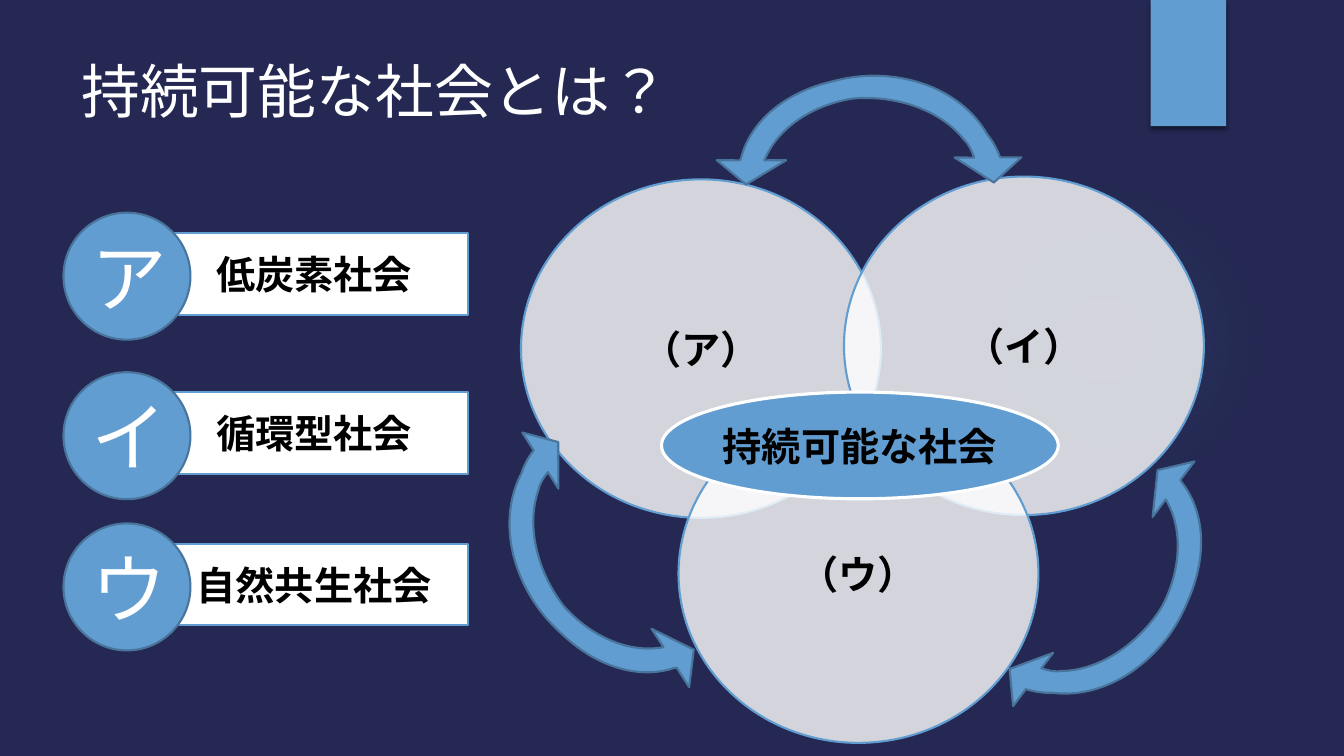
from lxml import etree
from pptx import Presentation
from pptx.dml.color import RGBColor
from pptx.enum import lang, shapes, text
from pptx.oxml import parse_xml
from pptx.oxml.ns import nsdecls, qn
from pptx.util import Cm, Pt

NAVY = RGBColor(0x24, 0x28, 0x52)
BLUE = RGBColor(0x62, 0x9D, 0xD1)
STEEL = RGBColor(0x49, 0x74, 0x9B)
WHITE = RGBColor(0xFF, 0xFF, 0xFF)
BLACK = RGBColor(0, 0, 0)

OVAL = shapes.MSO_SHAPE.OVAL
RECTANGLE = shapes.MSO_SHAPE.RECTANGLE

SOCIETIES = [("ア", "低炭素社会", 5.36), ("イ", "循環型社会", 9.38),
             ("ウ", "自然共生社会", 13.19)]
CIRCLES = [("（ア）", 13.13, 4.52), ("（イ）", 21.27, 4.45),
           ("（ウ）", 17.1, 10.19)]
# Centre and turn in degrees of each double arrow
ARROWS = [(21.84, 3.42, 353.4), (14.82, 14.47, 230.7), (28.32, 15, 120.5)]

# Double arrow around its centre in cm: one point is a line, three are a curve
ARROW_START = (0.36, -1.48)
ARROW_OUTLINE = [
    [(1.62, -1.33), (2.62, -0.63), (3.02, 0.31)],
    [(3.15, 0.51), (3.23, 0.72), (3.28, 0.93)],
    [(3.81, 0.99)], [(3.05, 1.54)], [(2.14, 0.8)], [(2.63, 0.86)],
    [(2.59, 0.69), (2.54, 0.51), (2.42, 0.37)],
    [(1.99, -0.32), (1.13, -0.81), (0.15, -0.94)],
    [(0, -0.96), (-0.13, -0.97), (-0.26, -0.97)],
    [(-1.28, -0.92), (-2.21, -0.45), (-2.63, 0.32)],
    [(-2.08, 0.38)], [(-3.16, 0.87)], [(-3.82, 0.18)], [(-3.24, 0.25)],
    [(-3.2, 0.18)],
    [(-2.87, -0.67), (-1.97, -1.28), (-0.84, -1.44)],
    [(-0.45, -1.5), (-0.06, -1.53), (0.36, -1.48)],
]


def paint(shape, fill, line=None, width=1.5):
    shape.shadow.inherit = False
    shape.fill.solid()
    shape.fill.fore_color.rgb = fill
    if line is None:
        shape.line.fill.background()
    else:
        shape.line.color.rgb = line
        shape.line.width = Pt(width)


def add_figure(page, kind, place, fill, line=None, width=1.5):
    shape = page.shapes.add_shape(kind, *(Cm(length) for length in place))
    paint(shape, fill, line, width)
    return shape


def write(shape, words, size, color, font="Arial", bold=False,
          align=text.PP_ALIGN.CENTER, anchor=text.MSO_ANCHOR.MIDDLE):
    frame = shape.text_frame
    frame.word_wrap = True
    frame.vertical_anchor = anchor
    frame.text = words
    para = frame.paragraphs[0]
    para.alignment = align
    span = para.runs[0]
    span.font.size = Pt(size)
    span.font.bold = bold
    span.font.color.rgb = color
    span.font.name = font
    span.font.language_id = lang.MSO_LANGUAGE_ID.JAPANESE
    latin = span.font._element.find(qn("a:latin"))
    latin.addnext(etree.Element(qn("a:ea"), typeface=font))


def set_opacity(shape, percent):
    color = shape._element.spPr.find(qn("a:solidFill"))[0]
    etree.SubElement(color, qn("a:alpha"), val=str(percent * 1000))


def add_glow(page):
    glow = add_figure(page, OVAL, (23.9, 4.65, 7.82, 7.82), WHITE)
    stops = "".join(
        f'<a:gs pos="{place * 1000}"><a:srgbClr val="5AA2AE">'
        f'<a:alpha val="{alpha * 1000}"/></a:srgbClr></a:gs>'
        for place, alpha in [(0, 7), (36, 6), (69, 0)])
    gradient = parse_xml(
        f'<a:gradFill {nsdecls("a")}><a:gsLst>{stops}</a:gsLst>'
        '<a:path path="circle"><a:fillToRect l="50000" t="50000" r="50000" '
        'b="50000"/></a:path></a:gradFill>')
    properties = glow._element.spPr
    properties.replace(properties.find(qn("a:solidFill")), gradient)


def add_ribbon(page):
    ribbon = add_figure(page, RECTANGLE, (29, 0, 1.9, 3.18), BLUE)
    effects = ribbon._element.spPr.find(qn("a:effectLst"))
    effects.append(parse_xml(
        f'<a:outerShdw {nsdecls("a")} blurRad="38100" dist="25400" '
        'dir="5400000" rotWithShape="0"><a:srgbClr val="000000">'
        '<a:alpha val="45000"/></a:srgbClr></a:outerShdw>'))


def add_title(page, words):
    box = page.shapes.add_textbox(Cm(1.8), Cm(1.26), Cm(26.14), Cm(3.89))
    write(box, words, 42, WHITE, "DejaVu Sans Mono",
          align=text.PP_ALIGN.LEFT, anchor=text.MSO_ANCHOR.TOP)


def bend_segments(shape, outline):
    """Turn each run of three drawn points into one cubic curve."""
    lines = iter(list(shape._element.iter(qn("a:lnTo"))))
    for segment in outline:
        first, *others = [next(lines) for _ in segment]
        if others:
            first.tag = qn("a:cubicBezTo")
            for line in others:
                first.append(line[0])
                line.getparent().remove(line)


def add_double_arrow(page, center_x, center_y, degrees):
    points = [(Cm(center_x + x), Cm(center_y + y))
              for segment in [[ARROW_START], *ARROW_OUTLINE]
              for x, y in segment]
    builder = page.shapes.build_freeform(*points[0])
    builder.add_line_segments(points[1:], close=True)
    arrow = builder.convert_to_shape()
    bend_segments(arrow, ARROW_OUTLINE)
    arrow.rotation = degrees
    paint(arrow, BLUE, STEEL)


def add_circle(page, words, left, top):
    circle = add_figure(page, OVAL, (left, top, 9.07, 8.53), WHITE, BLUE)
    set_opacity(circle, 80)
    write(circle, words, 28, BLACK, bold=True)


def add_center_label(page, words):
    label = add_figure(page, OVAL, (16.67, 9.88, 10, 2.69), BLUE, WHITE, 2.25)
    frame = label.text_frame
    frame.margin_left = frame.margin_right = 0
    frame.margin_top = frame.margin_bottom = 0
    write(label, words, 28, BLACK, bold=True)


def add_society(page, letter, name, top):
    bar = add_figure(page, RECTANGLE, (4.04, top + 0.51, 7.75, 2.06),
                     WHITE, BLUE)
    write(bar, name, 28, BLACK, bold=True)
    badge = add_figure(page, OVAL, (1.6, top, 3.2, 3.2), BLUE, STEEL)
    write(badge, letter, 54, WHITE)


def main():
    deck = Presentation()
    deck.slide_width, deck.slide_height = Cm(33.87), Cm(19.05)
    page = deck.slides.add_slide(deck.slide_layouts[6])

    # Backdrop and title
    page.background.fill.solid()
    page.background.fill.fore_color.rgb = NAVY
    add_glow(page)
    add_ribbon(page)
    add_title(page, "持続可能な社会とは？")

    # Overlapping circles joined by arrows
    for circle in CIRCLES:
        add_circle(page, *circle)
    add_center_label(page, "持続可能な社会")
    for arrow in ARROWS:
        add_double_arrow(page, *arrow)

    # Key to the three societies
    for society in SOCIETIES:
        add_society(page, *society)

    deck.save("out.pptx")


if __name__ == "__main__":
    main()
